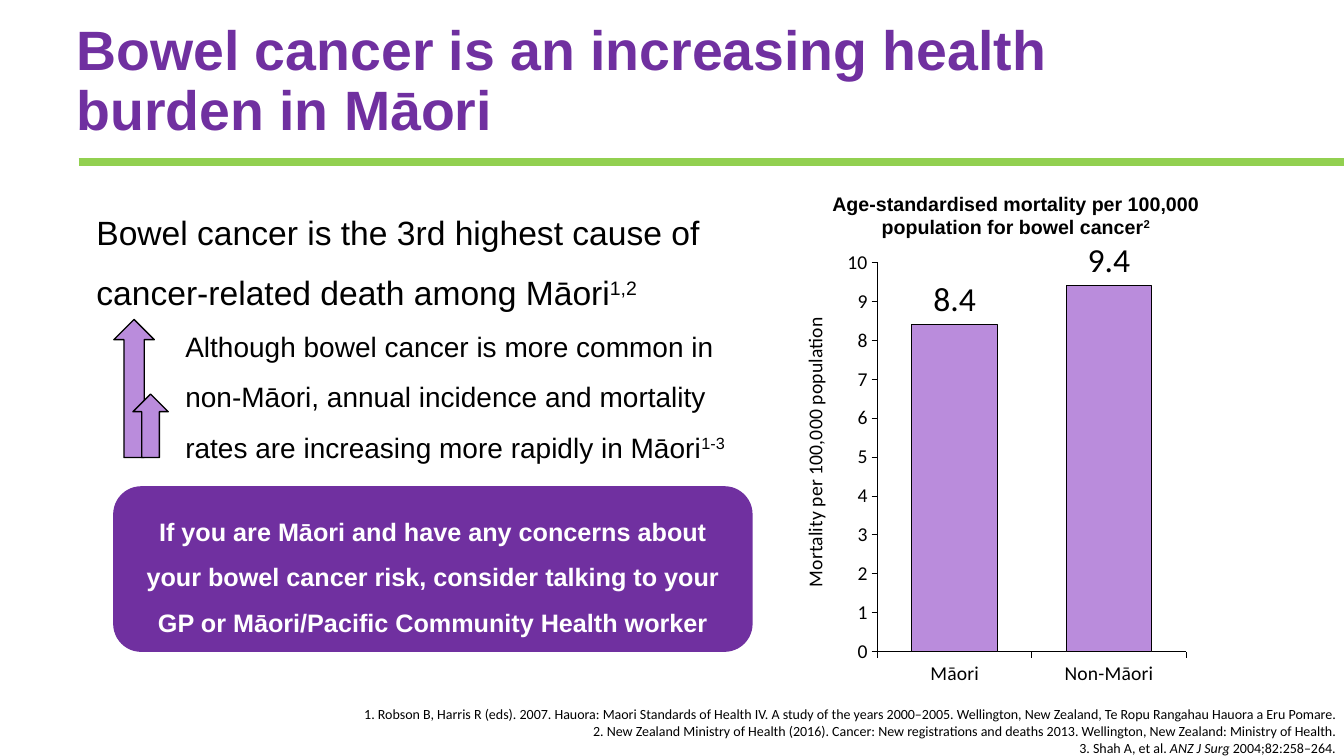
from dataclasses import dataclass

import pptx
import pptx.chart.data
import pptx.dml.color
import pptx.enum.chart
import pptx.enum.shapes
import pptx.enum.text
import pptx.oxml
import pptx.oxml.ns
import pptx.util
from lxml import etree
from pptx.util import Cm, Pt

ALIGN = pptx.enum.text.PP_ALIGN
ANCHOR = pptx.enum.text.MSO_ANCHOR
SHAPE = pptx.enum.shapes.MSO_SHAPE
qn = pptx.oxml.ns.qn


@dataclass(frozen=True)
class Theme:
    purple: str = "7030A0"
    lilac: str = "BA8CDC"
    green: str = "92D050"
    black: str = "000000"
    white: str = "FFFFFF"
    sans: str = "Arial"
    chart_font: str = "Calibri"
    title: float = 39.6
    lead: int = 24
    detail: int = 20
    callout: int = 18
    label: int = 14
    reference: int = 10


THEME = Theme()


def rgb(value):
    return pptx.dml.color.RGBColor.from_string(value)


def style_font(font, size, color=THEME.black, name=THEME.sans, bold=False):
    font.size, font.name, font.bold = Pt(size), name, bold
    font.color.rgb = rgb(color)


def write(para, pieces, size, color=THEME.black, name=THEME.sans, bold=False,
          align=ALIGN.LEFT, spacing=1.0):
    """Each piece is (text, mark), where mark is "", "super" or "italic"."""
    para.alignment, para.line_spacing = align, spacing
    for text, mark in pieces:
        span = para.add_run()
        span.text = text
        style_font(span.font, size, color, name, bold)
        if mark == "super":
            span.font._element.set("baseline", "30000")
        elif mark == "italic":
            span.font.italic = True


def add_text(page, left, top, width, height, anchor=ANCHOR.TOP):
    box = page.shapes.add_textbox(Cm(left), Cm(top), Cm(width), Cm(height))
    box.text_frame.word_wrap = True
    box.text_frame.vertical_anchor = anchor
    return box


def add_block(page, kind, left, top, width, height, fill, line=None):
    block = page.shapes.add_shape(kind, Cm(left), Cm(top), Cm(width), Cm(height))
    block.shadow.inherit = False
    block.fill.solid()
    block.fill.fore_color.rgb = rgb(fill)
    if line:
        block.line.color.rgb = rgb(line)
        block.line.width = Pt(1)
    else:
        block.line.fill.background()
    return block


def add_rule(page, left, right, y):
    rule = page.shapes.add_connector(
        pptx.enum.shapes.MSO_CONNECTOR.STRAIGHT, Cm(left), Cm(y), Cm(right), Cm(y))
    rule.line.color.rgb = rgb(THEME.green)
    rule.line.width = Pt(5.5)
    etree.SubElement(rule._element.spPr, qn("a:effectLst"))


def make_layout(**values):
    """Manual chart layout; values are fractions of the chart area."""
    layout = etree.Element(qn("c:layout"))
    manual = etree.SubElement(layout, qn("c:manualLayout"))
    if "w" in values:
        etree.SubElement(manual, qn("c:layoutTarget")).set("val", "inner")
    for tag in ("xMode", "yMode"):
        etree.SubElement(manual, qn("c:" + tag)).set("val", "edge")
    for tag, value in values.items():
        etree.SubElement(manual, qn("c:" + tag)).set("val", str(value))
    return layout


def set_layout(parent, layout):
    for old in parent.findall(qn("c:layout")):
        parent.remove(old)
    before = parent.find(qn("c:tx"))
    parent.insert(0 if before is None else 1, layout)


def style_axis(axis):
    axis.has_major_gridlines = False
    axis.major_tick_mark = pptx.enum.chart.XL_TICK_MARK.OUTSIDE
    axis.format.line.color.rgb = rgb(THEME.black)
    axis.format.line.width = Pt(0.75)
    style_font(axis.tick_labels.font, THEME.label, name=THEME.chart_font)


def add_mortality_chart(page):
    data = pptx.chart.data.CategoryChartData()
    data.categories = ["Māori", "Non-Māori"]
    data.add_series("Series 1", (8.4, 9.4))
    chart = page.shapes.add_chart(
        pptx.enum.chart.XL_CHART_TYPE.COLUMN_CLUSTERED,
        Cm(19.79), Cm(6.07), Cm(10.29), Cm(11.43), data).chart
    chart.has_legend = chart.has_title = False
    style_font(chart.font, THEME.reference, name=THEME.chart_font)

    # Axes
    style_axis(chart.category_axis)
    scale = chart.value_axis
    style_axis(scale)
    scale.minimum_scale, scale.maximum_scale, scale.major_unit = 0, 10, 1
    frame = scale.axis_title.text_frame
    frame.text = "Mortality per 100,000 population"
    style_font(frame.paragraphs[0].runs[0].font, THEME.label, name=THEME.chart_font)
    frame._txBody.find(qn("a:bodyPr")).set("rot", "-5400000")
    set_layout(scale.axis_title._element, make_layout(x=0.03, y=0.16))

    # Columns and their values
    plot = chart.plots[0]
    plot.gap_width, plot.overlap, plot.vary_by_categories = 80, -27, False
    columns = plot.series[0].format
    columns.fill.solid()
    columns.fill.fore_color.rgb = rgb(THEME.lilac)
    columns.line.color.rgb = rgb(THEME.black)
    columns.line.width = Pt(0.75)
    labels = plot.series[0].data_labels
    labels.show_value = True
    labels.position = pptx.enum.chart.XL_LABEL_POSITION.OUTSIDE_END
    style_font(labels.font, THEME.lead, name=THEME.chart_font)
    set_layout(chart._chartSpace.chart.plotArea,
               make_layout(x=0.226, y=0.047, w=0.756, h=0.859))


def add_references(page):
    panel = add_block(page, SHAPE.RECTANGLE, 7.52, 17.65, 26.39, 1.55, THEME.white)
    color = panel.fill._xPr.find(qn("a:solidFill"))[0]
    etree.SubElement(color, qn("a:alpha")).set("val", "50000")
    frame = panel.text_frame
    frame.word_wrap, frame.vertical_anchor = True, ANCHOR.TOP
    references = [
        [("1. Robson B, Harris R (eds). 2007. Hauora: Maori Standards of Health IV. "
          "A study of the years 2000–2005. Wellington, New Zealand, "
          "Te Ropu Rangahau Hauora a Eru Pomare.", "")],
        [("2. New Zealand Ministry of Health (2016). Cancer: New registrations and "
          "deaths 2013. Wellington, New Zealand: Ministry of Health.", "")],
        [("3. Shah A, et al. ", ""), ("ANZ J Surg ", "italic"),
         ("2004;82:258–264.", "")],
    ]
    for number, pieces in enumerate(references):
        para = frame.add_paragraph() if number else frame.paragraphs[0]
        write(para, pieces, THEME.reference, name=THEME.chart_font, align=ALIGN.RIGHT)


def main():
    deck = pptx.Presentation()
    deck.slide_width, deck.slide_height = Cm(33.87), Cm(19.05)
    page = deck.slides.add_slide(deck.slide_layouts[6])

    # Title and rule
    add_rule(page, 1.98, 33.87, 4.09)
    title = add_text(page, 1.68, 0.53, 29.21, 3.12, ANCHOR.MIDDLE)
    write(title.text_frame.paragraphs[0],
          [("Bowel cancer is an increasing health burden in Māori", "")],
          THEME.title, THEME.purple, bold=True, spacing=0.9)

    # Key facts
    facts = add_text(page, 2.18, 4.7, 16.71, 3.48).text_frame
    write(facts.paragraphs[0],
          [("Bowel cancer is the 3rd highest cause of cancer-related death "
            "among Māori", ""), ("1,2", "super")], THEME.lead, spacing=1.5)
    detail = facts.add_paragraph()
    detail.level = 1
    detail._p.get_or_add_pPr().set("marL", str(Cm(2.24)))
    detail._p.get_or_add_pPr().set("indent", "0")
    write(detail,
          [("Although bowel cancer is more common in non-Māori, annual incidence "
            "and mortality rates are increasing more rapidly in Māori", ""),
           ("1-3", "super")], THEME.detail, spacing=1.5)

    add_references(page)

    # Chart with its heading
    add_mortality_chart(page)
    heading = add_text(page, 20.7, 4.7, 9.8, 1.52)
    write(heading.text_frame.paragraphs[0],
          [("Age-standardised mortality per 100,000 population for bowel cancer", ""),
           ("2", "super")], THEME.label, bold=True, align=ALIGN.CENTER)

    # Advice
    advice = add_block(page, SHAPE.ROUNDED_RECTANGLE, 2.87, 12.27, 16.08, 4.14,
                       THEME.purple, THEME.purple)
    advice.text_frame.word_wrap = True
    advice.text_frame.vertical_anchor = ANCHOR.MIDDLE
    write(advice.text_frame.paragraphs[0],
          [("If you are Māori and have any concerns about your bowel cancer risk, "
            "consider talking to your GP or Māori/Pacific Community Health worker", "")],
          THEME.callout, THEME.white, bold=True, align=ALIGN.CENTER, spacing=1.5)

    # Rising arrows on a shared base
    base = 11.53
    for left, width, height in ((2.87, 1.02, 3.48), (3.35, 0.89, 1.6)):
        add_block(page, SHAPE.UP_ARROW, left, base - height, width, height,
                  THEME.lilac, THEME.black)

    deck.save("out.pptx")


if __name__ == "__main__":
    main()
